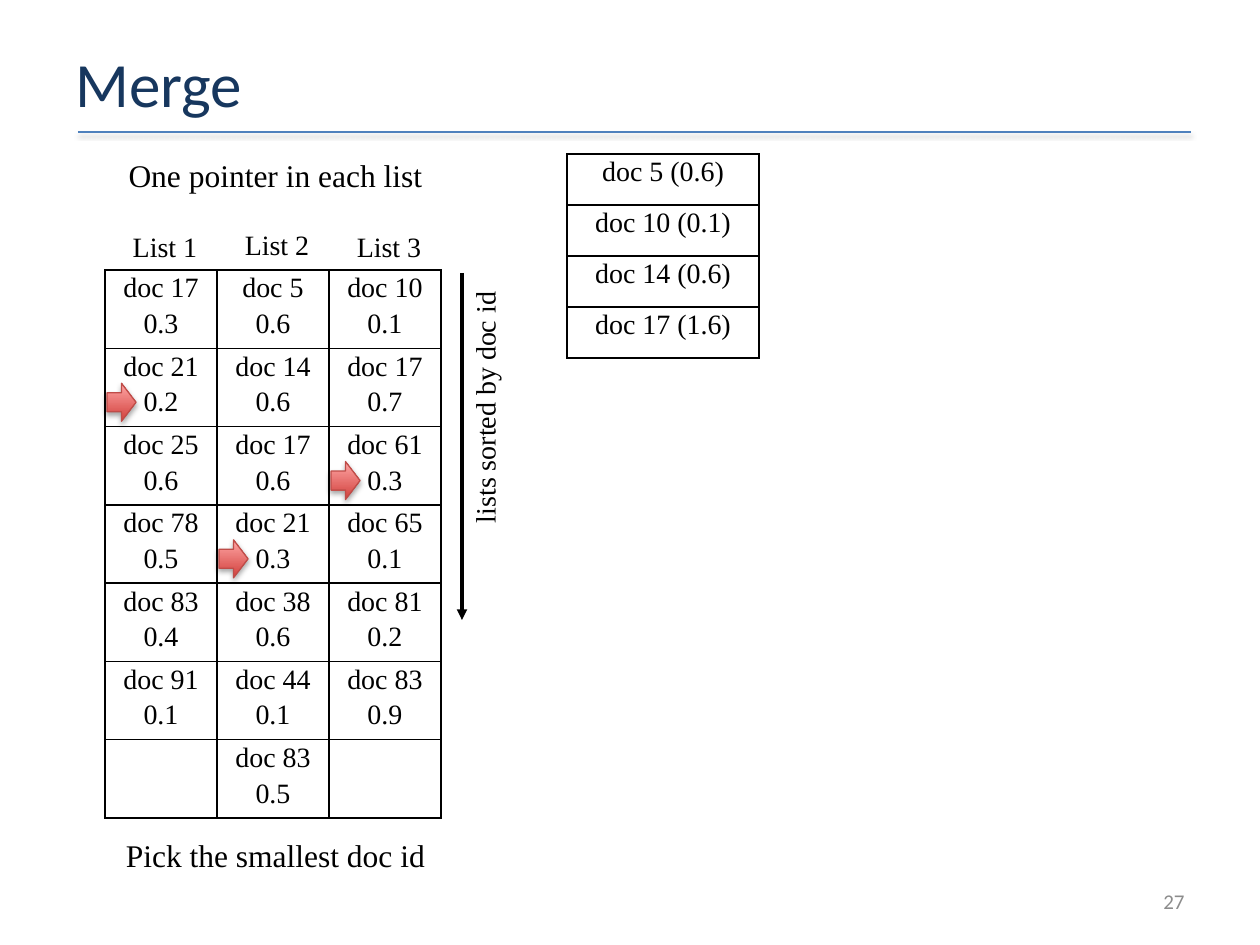
from dataclasses import dataclass

from lxml.etree import SubElement
from pptx import Presentation
from pptx.dml.color import RGBColor
from pptx.enum.shapes import MSO_CONNECTOR, MSO_SHAPE
from pptx.enum.text import MSO_ANCHOR, PP_ALIGN
from pptx.oxml.ns import qn
from pptx.util import Pt

PX = 914400 / 126


@dataclass(frozen=True)
class Theme:
    """Colours, fonts and type sizes of the slide."""
    title: str = "17375E"
    rule: str = "4F81BD"
    ink: str = "000000"
    muted: str = "8C8C8C"
    pointer_dark: str = "D1403C"
    pointer_light: str = "FFA6A5"
    pointer_edge: str = "BF4C48"
    head_font: str = "Calibri"
    body_font: str = "Times New Roman"
    title_size: int = 36
    note_size: int = 18
    body_size: int = 16
    number_size: int = 12


T = Theme()

LISTS = {
    "List 1": ["doc 17 0.3", "doc 21 0.2", "doc 25 0.6", "doc 78 0.5", "doc 83 0.4", "doc 91 0.1"],
    "List 2": ["doc 5 0.6", "doc 14 0.6", "doc 17 0.6", "doc 21 0.3", "doc 38 0.6", "doc 44 0.1",
               "doc 83 0.5"],
    "List 3": ["doc 10 0.1", "doc 17 0.7", "doc 61 0.3", "doc 65 0.1", "doc 81 0.2", "doc 83 0.9"],
}
POINTER_ROWS = [1, 3, 2]
MERGED = ["doc 5 (0.6)", "doc 10 (0.1)", "doc 14 (0.6)", "doc 17 (1.6)"]


def emu(*px):
    """Turn px lengths into EMU."""
    return [round(v * PX) for v in px]


def rgb(color):
    """Turn a hex string into a colour."""
    return RGBColor.from_string(color)


def write(tf, text, size=T.body_size, font=T.body_font, color=T.ink, align=PP_ALIGN.CENTER,
          anchor=MSO_ANCHOR.TOP, before=0):
    """Fill a text frame with one paragraph for each line of text."""
    tf.word_wrap = True
    tf.vertical_anchor = anchor
    for i, line in enumerate(text.split("\n")):
        p = tf.paragraphs[0] if i == 0 else tf.add_paragraph()
        p.alignment = align
        p.space_before = Pt(before)
        r = p.add_run()
        r.text = line
        r.font.size, r.font.name = Pt(size), font
        r.font.color.rgb = rgb(color)


def add_text(s, box, text, rotation=0, **fmt):
    """Add a text box."""
    sp = s.shapes.add_textbox(*emu(*box))
    sp.rotation = rotation
    write(sp.text_frame, text, **fmt)


def set_shadow(sp, blur=0, dist=0, alpha=0):
    """Give a shape a downward shadow, or none when alpha is zero."""
    effects = SubElement(sp._element.spPr, qn("a:effectLst"))
    if alpha:
        shadow = SubElement(effects, qn("a:outerShdw"), blurRad=str(Pt(blur)), dist=str(Pt(dist)),
                            dir="5400000", rotWithShape="0")
        color = SubElement(shadow, qn("a:srgbClr"), val=T.ink)
        SubElement(color, qn("a:alpha"), val=str(alpha * 1000))


def add_line(s, ends, color, width, arrow=False, **shadow):
    """Add a straight line, with an arrowhead if asked."""
    sp = s.shapes.add_connector(MSO_CONNECTOR.STRAIGHT, *emu(*ends))
    sp.line.color.rgb = rgb(color)
    sp.line.width = Pt(width)
    if arrow:
        SubElement(sp.line._get_or_add_ln(), qn("a:tailEnd"), type="triangle")
    set_shadow(sp, **shadow)


def border_cell(cell):
    """Draw thin lines on all four sides of a cell."""
    tc_pr = cell._tc.get_or_add_tcPr()
    for i, side in enumerate(("lnL", "lnR", "lnT", "lnB")):
        ln = SubElement(tc_pr, qn(f"a:{side}"), w=str(Pt(1)))
        fill = SubElement(ln, qn("a:solidFill"))
        SubElement(fill, qn("a:srgbClr"), val=T.ink)
        tc_pr.remove(ln)
        tc_pr.insert(i, ln)


def add_grid(s, box, columns):
    """Add a plain bordered table from columns of text."""
    n_rows = max(map(len, columns))
    table = s.shapes.add_table(n_rows, len(columns), *emu(*box)).table
    table.first_row = table.horz_banding = False
    for c, column in enumerate(columns):
        for r in range(n_rows):
            cell = table.cell(r, c)
            cell.margin_left, cell.margin_right, cell.margin_top, cell.margin_bottom = emu(6, 6, 3, 3)
            cell.fill.background()
            border_cell(cell)
            if r < len(column):
                write(cell.text_frame, column[r], before=2.5)


def add_pointer(s, x, y):
    """Add a red pointer arrow."""
    sp = s.shapes.add_shape(MSO_SHAPE.RIGHT_ARROW, *emu(x, y, 29, 38))
    sp.fill.gradient()
    sp.fill.gradient_angle = 90
    for stop, color in zip(sp.fill.gradient_stops, (T.pointer_dark, T.pointer_light)):
        stop.color.rgb = rgb(color)
    sp.line.color.rgb = rgb(T.pointer_edge)
    sp.line.width = Pt(0.75)
    set_shadow(sp, blur=3.1, dist=1.8, alpha=35)


def add_header(s, x, y, w, h):
    """Add the title and the rule under it."""
    add_line(s, (x + 15, y + 94, x + w - 6, y + 94), T.rule, 1, blur=3.1, dist=1.6, alpha=38)
    add_text(s, (x, y, w, h), "Merge", size=T.title_size, font=T.head_font, color=T.title,
             align=PP_ALIGN.LEFT, anchor=MSO_ANCHOR.MIDDLE)


def add_lists(s, x, y, w, h):
    """Add the sorted lists with labels, pointers, notes and sort arrow."""
    col_w = w / len(LISTS)
    row_h = h / max(map(len, LISTS.values()))
    add_grid(s, (x, y, w, h), [[v.replace(" 0.", "\n0.") for v in col] for col in LISTS.values()])
    for c, (name, row) in enumerate(zip(LISTS, POINTER_ROWS)):
        left = x + c * col_w
        add_text(s, (left + 2, y - 47 - c % 2 * 2, col_w + 4, 47), name)
        add_pointer(s, left + 2, y + row * row_h + 35)
    for top, note in ((y - 120, "One pointer in each list"), (y + h + 12, "Pick the smallest doc id")):
        add_text(s, (x - 16, top, w + 37, 50), note, size=T.note_size)
    add_line(s, (x + w + 21, y + 3, x + w + 21, y + 350), T.ink, 2, arrow=True)
    add_text(s, (x + w - 103, y + 95, 294, 47), "lists sorted by doc id", rotation=270,
             align=PP_ALIGN.LEFT)


def add_merged(s, x, y, w, h):
    """Add the merged result list."""
    add_grid(s, (x, y, w, h), [MERGED])


def add_number(s, x, y, w, h):
    """Add the slide number."""
    add_text(s, (x, y, w, h), "27", size=T.number_size, font=T.head_font, color=T.muted,
             align=PP_ALIGN.RIGHT, anchor=MSO_ANCHOR.MIDDLE)


def main():
    """Build and save the slide."""
    prs = Presentation()
    prs.slide_width, prs.slide_height = emu(1260, 945)
    s = prs.slides.add_slide(prs.slide_layouts[6])
    add_header(s, 63, 38, 1134, 89)
    add_lists(s, 105, 270, 336, 548)
    add_merged(s, 567, 154, 192, 204)
    add_number(s, 903, 876, 294, 50)
    prs.save("out.pptx")


if __name__ == "__main__":
    main()
